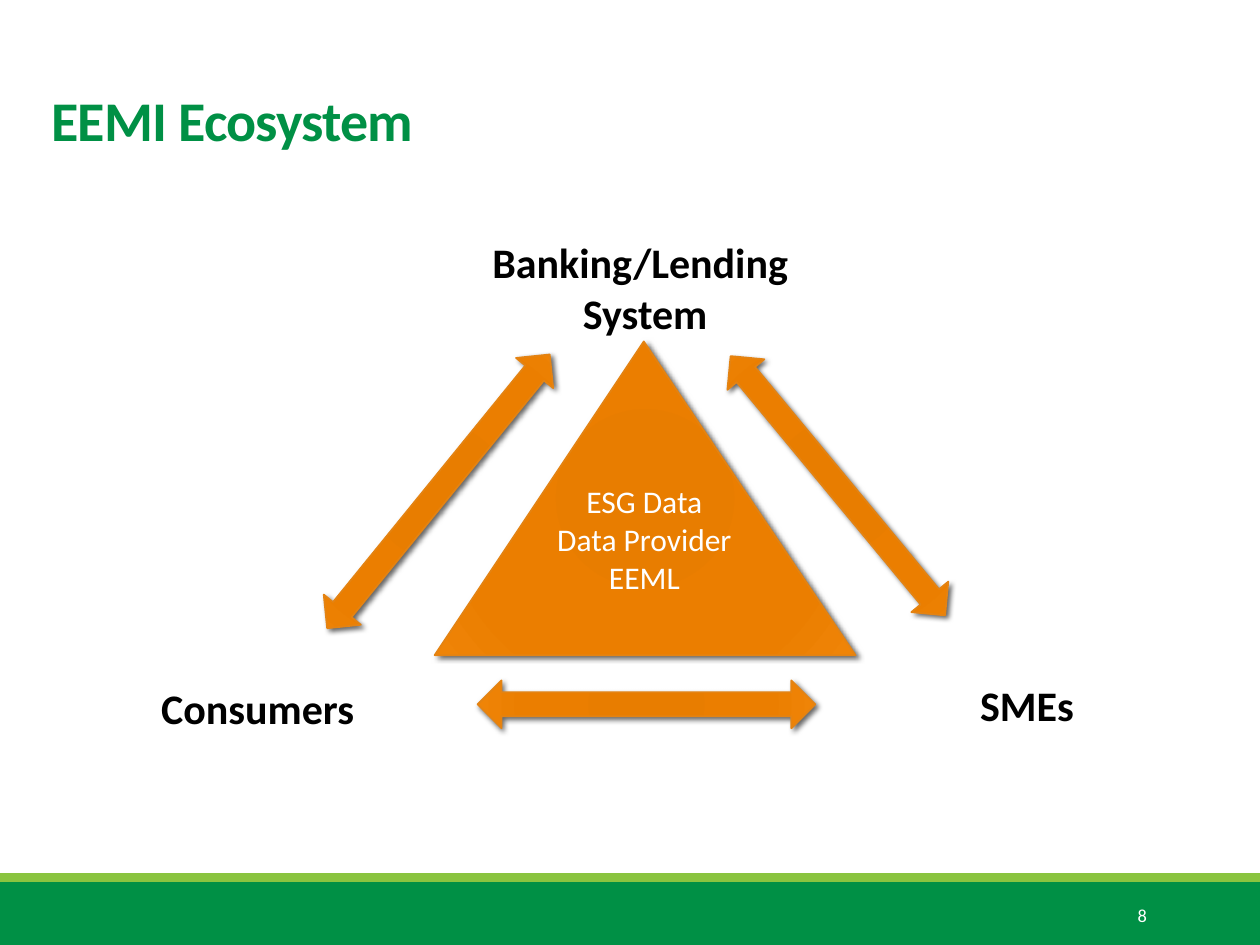
from lxml.etree import fromstring
from pptx import Presentation
from pptx.dml.color import RGBColor
from pptx.enum.shapes import MSO_SHAPE
from pptx.enum.text import MSO_ANCHOR, PP_ALIGN
from pptx.oxml.ns import nsdecls, qn
from pptx.util import Inches, Pt

GREEN = RGBColor(0x00, 0x90, 0x45)
LIME = RGBColor(0x8A, 0xC4, 0x3F)
ORANGE = RGBColor(0xE4, 0x83, 0x12)
WHITE = RGBColor(0xFF, 0xFF, 0xFF)
BLACK = RGBColor(0x00, 0x00, 0x00)
STOPS = [(0, "E57B00"), (34, "E87D00"), (70, "EB7E00"), (100, "EF8407")]

# Content: places are left, top, width, height
BANDS = [((0, 7, 10, 0.5), GREEN), ((0, 6.93, 10, 0.07), LIME)]
TITLE = ("EEMI Ecosystem", (0.31, 0.63, 9.38, 0.64))
NUMBER = ("8", (8.12, 7.06, 1.08, 0.4))
CORE = ("ESG Data\nData Provider\nEEML", (3.45, 2.71, 3.34, 2.49))
ACTORS = [  # text, place, wrap
    ("SMEs", (7.68, 5.34, 0.96, 0.5), False),
    ("Banking/Lending \nSystem", (3.59, 1.83, 3.06, 0.91), True),
    ("Consumers", (1.18, 5.37, 1.75, 0.5), False),
]
ARROWS = [  # place before turning, angle
    ((3.29, 2.5, 0.38, 2.8), 39.1),
    ((4.94, 4.25, 0.38, 2.68), 90),
    ((6.46, 2.52, 0.38, 2.67), 320.4),
]

GRAD = (
    f'<a:gradFill {nsdecls("a")} rotWithShape="1"><a:gsLst>'
    + "".join(f'<a:gs pos="{pos * 1000}"><a:srgbClr val="{hue}"/></a:gs>'
              for pos, hue in STOPS)
    + '</a:gsLst><a:path path="circle"><a:fillToRect l="100000" t="100000" '
      'r="100000" b="100000"/></a:path></a:gradFill>')
SHADOW = (
    f'<a:effectLst {nsdecls("a")}><a:outerShdw blurRad="{Pt(3)}" '
    f'dist="{Pt(2)}" dir="2700000" algn="tl" rotWithShape="0">'
    '<a:srgbClr val="000000"><a:alpha val="60000"/></a:srgbClr>'
    '</a:outerShdw></a:effectLst>')

prs = Presentation()
prs.slide_width, prs.slide_height = Inches(10), Inches(7.5)
shapes = prs.slides.add_slide(prs.slide_layouts[6]).shapes


def write(shape, text, size, color, align=PP_ALIGN.LEFT, bold=False):
    frame = shape.text_frame
    frame.text = text
    for para in frame.paragraphs:
        para.alignment = align
        for run in para.runs:
            font = run.font
            font.name, font.size, font.bold = "Calibri", Pt(size), bold
            font.color.rgb = color
    return frame


def add_text(text, place, size, color, align=PP_ALIGN.LEFT, bold=False,
             wrap=True):
    box = shapes.add_textbox(*map(Inches, place))
    frame = write(box, text, size, color, align, bold)
    frame.word_wrap = wrap
    return frame


def add_glossy(kind, place):
    shape = shapes.add_shape(kind, *map(Inches, place))
    shape.line.color.rgb = ORANGE
    shape.line.width = Pt(1)
    props = shape.fill._xPr
    props.find(qn("a:prstGeom")).addnext(fromstring(GRAD))
    props.find(qn("a:ln")).addnext(fromstring(SHADOW))
    return shape


# Footer bands and slide number
for place, color in BANDS:
    band = shapes.add_shape(MSO_SHAPE.RECTANGLE, *map(Inches, place))
    band.shadow.inherit = False
    band.fill.solid()
    band.fill.fore_color.rgb = color
    band.line.fill.background()
frame = add_text(*NUMBER, 10.5, WHITE, PP_ALIGN.RIGHT)
frame.vertical_anchor = MSO_ANCHOR.MIDDLE

# Title with tight letter spacing
frame = add_text(*TITLE, 32, GREEN, bold=True)
frame.paragraphs[0].runs[0].font._element.set("spc", "-50")

# Central triangle, its text lifted by the bottom margin
text, place = CORE
core = add_glossy(MSO_SHAPE.ISOSCELES_TRIANGLE, place)
core.adjustments[0] = 0.497
frame = write(core, text, 18, WHITE, PP_ALIGN.CENTER)
frame.vertical_anchor = MSO_ANCHOR.MIDDLE
frame.margin_bottom = Inches(0.65)

# Actors at the corners
for text, place, wrap in ACTORS:
    align = PP_ALIGN.CENTER if wrap else PP_ALIGN.LEFT
    add_text(text, place, 24, BLACK, align, True, wrap)

# Arrows between the actors
for place, angle in ARROWS:
    add_glossy(MSO_SHAPE.UP_DOWN_ARROW, place).rotation = angle

prs.save("out.pptx")
